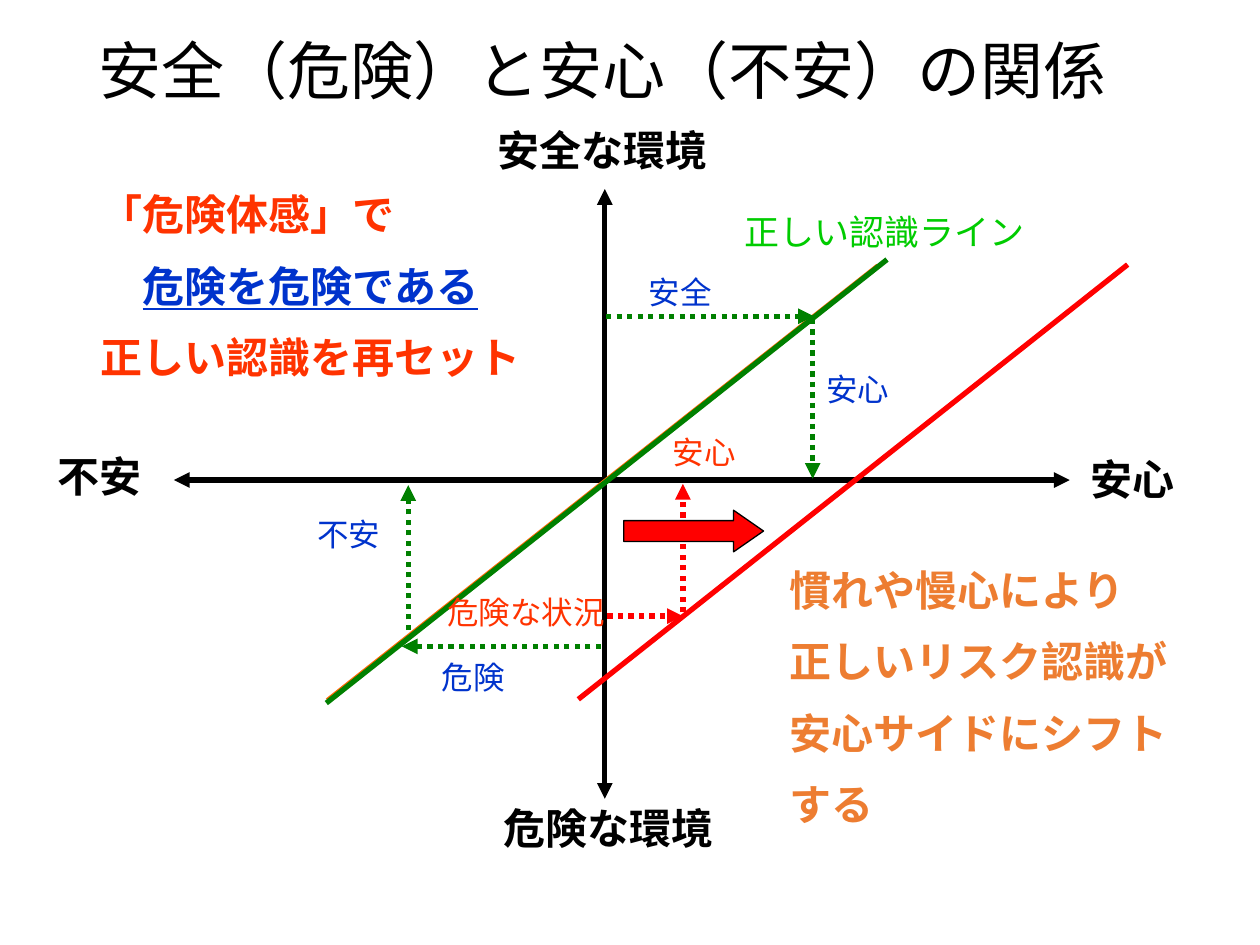
"""Build the slide relating safety and danger to ease and anxiety."""
import pptx
import pptx.dml.color
import pptx.enum.dml
import pptx.enum.shapes
import pptx.enum.text
import pptx.oxml
import pptx.oxml.ns
import pptx.util

Inches = pptx.util.Inches
COLORS = {
    "black": "000000",
    "orange": "FF6600",
    "lime": "00CC00",
    "green": "008000",
    "red": "FF0000",
    "vermilion": "FF3300",
    "blue": "0033CC",
    "amber": "ED7D31",
}


class SlideBuilder:
    def __init__(self, slide):
        self.slide = slide
        self.serif = "Times New Roman"
        self.sans = "Calibri"
        self.title_font = "Noto Sans CJK JP"
        self.line_width = pptx.util.Pt(3)

    def color(self, name):
        return pptx.dml.color.RGBColor.from_string(COLORS[name])

    def element(self, parent, tag, **attributes):
        child = pptx.oxml.parse_xml(f"<a:{tag} {pptx.oxml.ns.nsdecls('a')}/>")
        for name, value in attributes.items():
            child.set(name, value)
        parent.append(child)
        return child

    def style(self, font, name, size, color, bold=False):
        font.name = name
        font.size = pptx.util.Pt(size)
        font.bold = bold
        font.color.rgb = self.color(color)

    def title(self, text, left, top, width, height):
        box = self.slide.shapes.title
        box.left, box.top = Inches(left), Inches(top)
        box.width, box.height = Inches(width), Inches(height)
        frame = box.text_frame
        frame.text = text
        frame.auto_size = pptx.enum.text.MSO_AUTO_SIZE.NONE
        frame.vertical_anchor = pptx.enum.text.MSO_ANCHOR.TOP
        para = frame.paragraphs[0]
        para.alignment = pptx.enum.text.PP_ALIGN.LEFT
        self.style(para.font, self.title_font, 36, "black")

    def text(self, lines, left, top, width, height, color, size=24, bold=True, font=None):
        box = self.slide.shapes.add_textbox(
            Inches(left), Inches(top), Inches(width), Inches(height))
        frame = box.text_frame
        frame.word_wrap = True
        for index, line in enumerate(lines):
            para = frame.add_paragraph() if index else frame.paragraphs[0]
            if index:
                spacing = self.element(para._p.get_or_add_pPr(), "spcBef")
                self.element(spacing, "spcPct", val="50000")
            para.add_run().text = line
            self.style(para.font, font or self.serif, size, color, bold)
        return frame

    def label(self, text, left, top, width, color, font=None):
        self.text([text], left, top, width, 0.4, color, 18, False, font)

    def line(self, start, end, color, head=False, tail=False, dotted=False):
        connector = self.slide.shapes.add_connector(
            pptx.enum.shapes.MSO_CONNECTOR.STRAIGHT,
            *(Inches(value) for value in (*start, *end)))
        connector.line.width = self.line_width
        connector.line.color.rgb = self.color(color)
        if dotted:
            connector.line.dash_style = pptx.enum.dml.MSO_LINE.ROUND_DOT
        outline = connector.line._get_or_add_ln()
        for tag, shown in (("headEnd", head), ("tailEnd", tail)):
            if shown:
                self.element(outline, tag, type="triangle")
        self.element(connector._element.spPr, "effectLst")

    def block_arrow(self, left, top, width, height):
        arrow = self.slide.shapes.add_shape(
            pptx.enum.shapes.MSO_SHAPE.RIGHT_ARROW,
            Inches(left), Inches(top), Inches(width), Inches(height))
        arrow.adjustments[1] = 0.72
        arrow.shadow.inherit = False
        arrow.fill.solid()
        arrow.fill.fore_color.rgb = self.color("red")
        arrow.line.color.rgb = self.color("black")
        arrow.line.width = pptx.util.Pt(0.75)


def main():
    deck = pptx.Presentation()
    deck.slide_width, deck.slide_height = Inches(10), Inches(7.5)
    page = SlideBuilder(deck.slides.add_slide(deck.slide_layouts[5]))
    page.title("安全（危険）と安心（不安）の関係", 0.68, 0.2, 8.95, 0.7)

    for start, end in (((1.38, 3.81), (8.49, 3.81)), ((4.8, 1.5), (4.8, 6.34))):
        page.line(start, end, "black", head=True, tail=True)
    for name, left, top, width in (
        ("安全な環境", 3.85, 0.94, 1.9),
        ("危険な環境", 3.9, 6.32, 1.9),
        ("安心", 8.56, 3.55, 0.94),
        ("不安", 0.36, 3.53, 0.94),
    ):
        page.text([name], left, top, width, 0.5, "black")

    for start, end, color in (
        ((2.6, 5.56), (6.97, 2.11), "orange"),
        ((2.59, 5.58), (7.04, 2.06), "green"),
        ((4.59, 5.55), (8.95, 2.1), "red"),
    ):
        page.line(start, end, color)
    page.text(["正しい認識ライン"], 5.81, 1.62, 2.56, 0.43, "lime", 20, False)

    for start, end, color in (
        ((4.82, 4.89), (5.42, 4.89), "red"),
        ((5.42, 4.86), (5.42, 3.84), "red"),
        ((4.81, 2.51), (6.46, 2.51), "green"),
        ((6.45, 2.53), (6.45, 3.8), "green"),
        ((4.77, 5.13), (3.19, 5.13), "green"),
        ((3.24, 5), (3.24, 3.85), "green"),
    ):
        page.line(start, end, color, tail=True, dotted=True)
    page.block_arrow(4.95, 4.05, 1.11, 0.33)

    page.label("危険な状況", 3.45, 4.66, 1.5, "vermilion")
    page.label("安心", 5.24, 3.39, 0.74, "vermilion")
    for name, left, top, width in (
        ("安全", 5.05, 2.12, 0.77),
        ("安心", 6.46, 2.89, 0.77),
        ("危険", 3.41, 5.17, 0.74),
        ("不安", 2.42, 4.04, 0.74),
    ):
        page.label(name, left, top, width, "blue", page.sans)

    page.text(["慣れや慢心により", "正しいリスク認識が", "安心サイドにシフト", "する"],
              6.17, 4.43, 3.65, 2.32, "amber")
    message = page.text(["「危険体感」で", "　", "正しい認識を再セット"],
                        0.7, 1.45, 3.81, 1.72, "vermilion")
    span = message.paragraphs[1].add_run()
    span.text = "危険を危険である"
    span.font.underline = True
    span.font.color.rgb = page.color("blue")

    deck.save("out.pptx")


if __name__ == "__main__":
    main()
